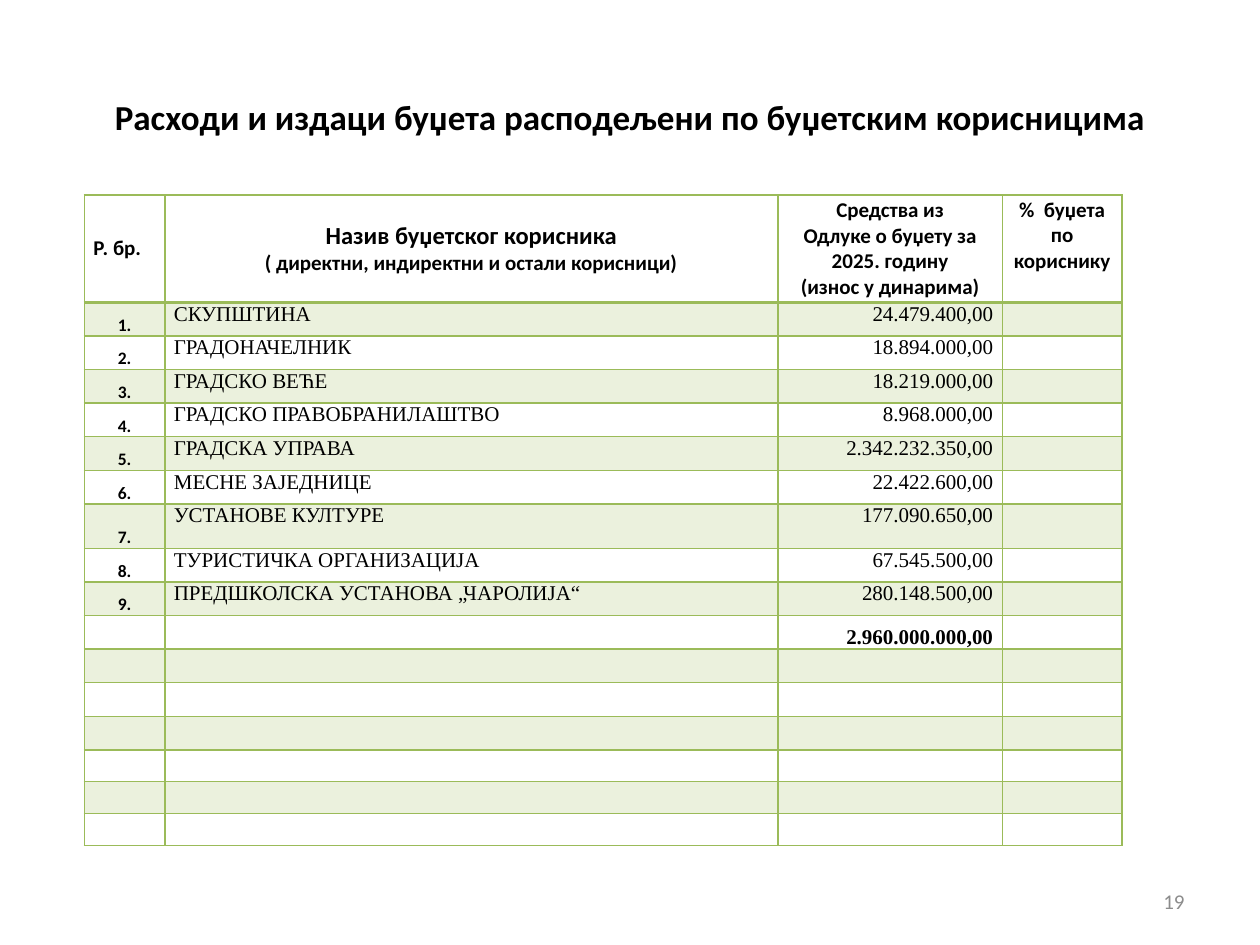
from dataclasses import dataclass

from lxml import etree
from pptx import Presentation
from pptx.dml.color import RGBColor
from pptx.enum.text import MSO_ANCHOR, PP_ALIGN
from pptx.oxml.ns import qn
from pptx.util import Pt

TOP, MIDDLE, BOTTOM = MSO_ANCHOR.TOP, MSO_ANCHOR.MIDDLE, MSO_ANCHOR.BOTTOM
LEFT, CENTER, RIGHT, JUSTIFY = PP_ALIGN.LEFT, PP_ALIGN.CENTER, PP_ALIGN.RIGHT, PP_ALIGN.JUSTIFY


@dataclass(frozen=True)
class Theme:
    heading_font: str = "Calibri"
    body_font: str = "Times New Roman"
    ink: str = "000000"
    muted: str = "8C8C8C"
    green: str = "9BBB59"
    band_opacity: int = 20
    title: int = 20
    lead: int = 14
    body: int = 12
    rank: int = 10
    rule: float = 1
    header_rule: float = 2


THEME = Theme()
COLUMN_WIDTHS = (46, 350.4, 128.2, 68.4)
HEADER_HEIGHT, ROW_HEIGHT, TALL_HEIGHT, SHORT_HEIGHT = 61.4, 19.2, 25.4, 18.2
TALL_ROW, SHORT_ROWS, ROW_COUNT = 7, 3, 17
CELL_INSET = 5.2

USERS = (
    ("СКУПШТИНА", "24.479.400,00"),
    ("ГРАДОНАЧЕЛНИК", "18.894.000,00"),
    ("ГРАДСКО ВЕЋЕ", "18.219.000,00"),
    ("ГРАДСКО ПРАВОБРАНИЛАШТВО", "8.968.000,00"),
    ("ГРАДСКА УПРАВА", "2.342.232.350,00"),
    ("МЕСНЕ ЗАЈЕДНИЦЕ", "22.422.600,00"),
    ("УСТАНОВЕ КУЛТУРЕ", "177.090.650,00"),
    ("ТУРИСТИЧКА ОРГАНИЗАЦИЈА", "67.545.500,00"),
    ("ПРЕДШКОЛСКА УСТАНОВА „ЧАРОЛИЈА“", "280.148.500,00"),
)
TOTAL = "2.960.000.000,00"


def write(frame, *lines, size=THEME.body, font=THEME.heading_font, color=THEME.ink,
          bold=False, align=LEFT, anchor=MIDDLE):
    frame.word_wrap = True
    frame.vertical_anchor = anchor
    sizes = size if isinstance(size, tuple) else (size,) * len(lines)
    for index, (line, points) in enumerate(zip(lines, sizes)):
        paragraph = frame.add_paragraph() if index else frame.paragraphs[0]
        paragraph.alignment = align
        run = paragraph.add_run()
        run.text = line
        run.font.size = Pt(points)
        run.font.name = font
        run.font.bold = bold
        run.font.color.rgb = RGBColor.from_string(color)


def place(shape, box):
    shape.left, shape.top, shape.width, shape.height = (Pt(length) for length in box)


def add_title(slide, box):
    title = slide.shapes.title
    place(title, box)
    write(title.text_frame, "Расходи и издаци буџета расподељени по буџетским корисницима",
          size=THEME.title, bold=True, align=CENTER)


def style_cell(cell, banded, top_rule, bottom_rule):
    cell.margin_left = cell.margin_right = Pt(CELL_INSET)
    cell.margin_top = cell.margin_bottom = 0
    properties = cell._tc.get_or_add_tcPr()
    rules = {"lnL": THEME.rule, "lnR": THEME.rule, "lnT": top_rule, "lnB": bottom_rule}
    for side, weight in rules.items():
        line = etree.SubElement(properties, qn(f"a:{side}"), w=str(Pt(weight)))
        solid = etree.SubElement(line, qn("a:solidFill"))
        etree.SubElement(solid, qn("a:srgbClr"), val=THEME.green)
    if banded:
        cell.fill.solid()
        cell.fill.fore_color.rgb = RGBColor.from_string(THEME.green)
        tint = properties.find(f"{qn('a:solidFill')}/{qn('a:srgbClr')}")
        etree.SubElement(tint, qn("a:alpha"), val=str(THEME.band_opacity * 1000))
    else:
        cell.fill.background()


def write_header(cells):
    rank, name, amount, share = cells
    write(rank.text_frame, "Р. бр.", bold=True)
    write(name.text_frame, "Назив буџетског корисника",
          "( директни, индиректни и остали корисници)",
          size=(THEME.lead, THEME.body), bold=True, align=CENTER)
    write(amount.text_frame, "Средства из", "Одлуке о буџету за 2025. годину",
          "(износ у динарима)", bold=True, align=CENTER)
    write(share.text_frame, "%  буџета по кориснику", bold=True, align=CENTER)
    for cell in (rank, name, amount):
        cell.vertical_anchor = MIDDLE
    share.vertical_anchor = TOP
    share.margin_top = Pt(1.4)


def write_user(cells, number, user, funds):
    rank, name, amount, _ = cells
    write(rank.text_frame, f"{number}.", size=THEME.rank, bold=True, align=CENTER)
    write(name.text_frame, user, font=THEME.body_font, align=JUSTIFY)
    write(amount.text_frame, funds, font=THEME.body_font, align=RIGHT)
    rank.vertical_anchor = BOTTOM
    name.vertical_anchor = amount.vertical_anchor = TOP


def add_budget_table(slide, box):
    table = slide.shapes.add_table(ROW_COUNT, len(COLUMN_WIDTHS),
                                   *(Pt(length) for length in box)).table
    table.first_row = table.horz_banding = False
    for column, width in zip(table.columns, COLUMN_WIDTHS):
        column.width = Pt(width)
    heights = [ROW_HEIGHT] * (ROW_COUNT - SHORT_ROWS) + [SHORT_HEIGHT] * SHORT_ROWS
    heights[0], heights[TALL_ROW] = HEADER_HEIGHT, TALL_HEIGHT
    rows = [list(row.cells) for row in table.rows]
    for index, (row, height) in enumerate(zip(table.rows, heights)):
        row.height = Pt(height)
        for cell in rows[index]:
            style_cell(cell, index % 2 == 1,
                       THEME.header_rule if index == 1 else THEME.rule,
                       THEME.header_rule if index == 0 else THEME.rule)

    write_header(rows[0])
    for number, (user, funds) in enumerate(USERS, start=1):
        write_user(rows[number], number, user, funds)
    total = rows[len(USERS) + 1][2]
    write(total.text_frame, TOTAL, font=THEME.body_font, bold=True, align=RIGHT)
    total.vertical_anchor = BOTTOM

    for cell in (cell for cells in rows for cell in cells if not cell.text):
        etree.SubElement(cell.text_frame.paragraphs[0]._p, qn("a:endParaRPr"),
                         sz=str(THEME.rank * 100))


def add_page_number(slide, box):
    number = slide.shapes.add_textbox(*(Pt(length) for length in box))
    write(number.text_frame, "19", color=THEME.muted, align=RIGHT)


def main():
    deck = Presentation()
    deck.slide_width, deck.slide_height = Pt(720), Pt(540)
    slide = deck.slides.add_slide(deck.slide_layouts[5])
    add_title(slide, (36, 21.6, 648, 90))
    add_budget_table(slide, (48.2, 111.4, 593, 371.8))
    add_page_number(slide, (516, 500.5, 168, 28.75))
    deck.save("out.pptx")


if __name__ == "__main__":
    main()
